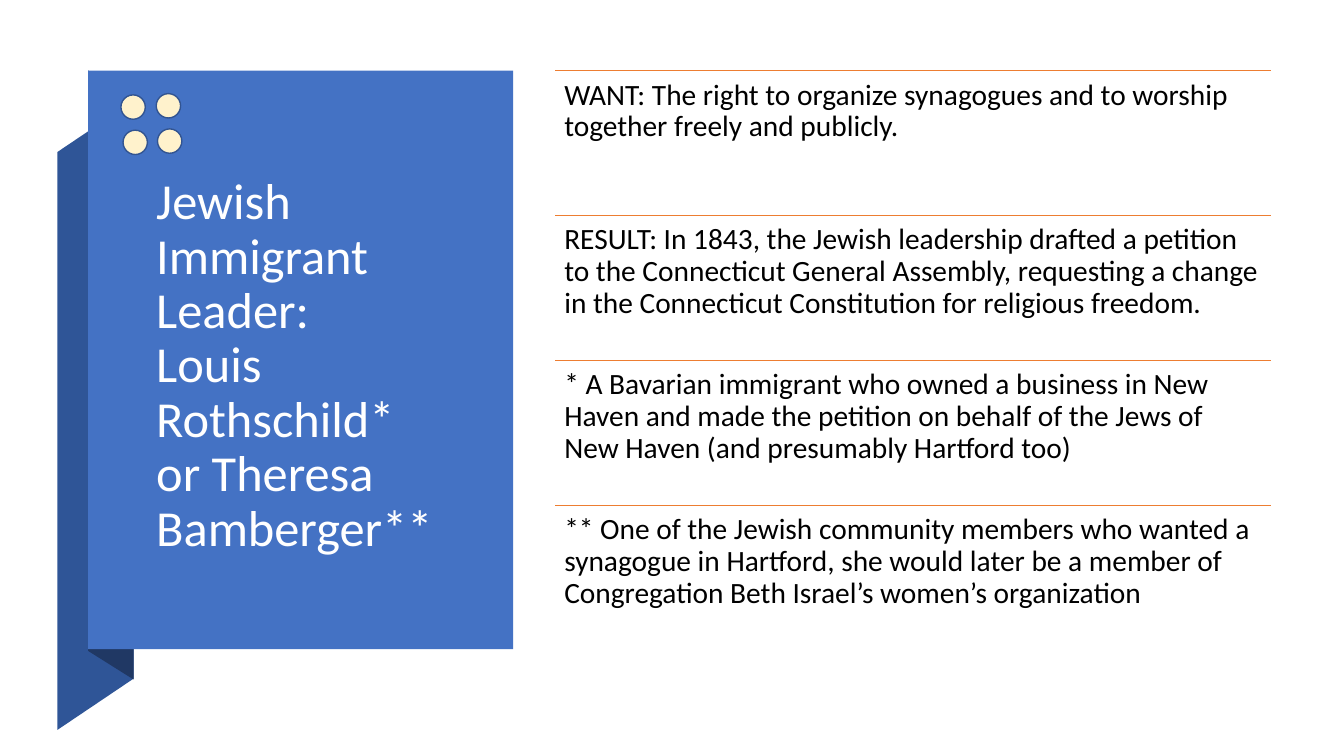
from pptx import Presentation
from pptx.dml.color import RGBColor
from pptx.enum.shapes import MSO_CONNECTOR, MSO_SHAPE
from pptx.enum.text import MSO_ANCHOR, MSO_AUTO_SIZE, PP_ALIGN
from pptx.oxml.ns import qn
from pptx.util import Inches, Pt
from lxml import etree

RECT, OVAL = MSO_SHAPE.RECTANGLE, MSO_SHAPE.OVAL
STRAIGHT = MSO_CONNECTOR.STRAIGHT
TOP, MIDDLE = MSO_ANCHOR.TOP, MSO_ANCHOR.MIDDLE
LEFT = PP_ALIGN.LEFT
NO_FIT = MSO_AUTO_SIZE.NONE

BLUE = RGBColor(0x44, 0x72, 0xC4)
RIBBON_BLUE = RGBColor(0x2F, 0x55, 0x97)
FOLD_BLUE = RGBColor(0x20, 0x38, 0x64)
DOT_LINE = RGBColor(0x32, 0x54, 0x91)
CREAM = RGBColor(0xFF, 0xF2, 0xCC)
ORANGE = RGBColor(0xED, 0x7D, 0x31)
WHITE = RGBColor(0xFF, 0xFF, 0xFF)
BLACK = RGBColor(0x00, 0x00, 0x00)

COLUMNS, ROWS = 160, 90

TITLE = "Jewish Immigrant Leader:\vLouis Rothschild* or Theresa Bamberger**"
ITEMS = [
    "WANT: The right to organize synagogues and to worship together freely and publicly.",
    "RESULT: In 1843, the Jewish leadership drafted a petition to the Connecticut General "
    "Assembly, requesting a change in the Connecticut Constitution for religious freedom.",
    "* A Bavarian immigrant who owned a business in New Haven and made the petition on "
    "behalf of the Jews of New Haven (and presumably Hartford too)",
    "** One of the Jewish community members who wanted a synagogue in Hartford, she would "
    "later be a member of Congregation Beth Israel’s women’s organization",
]


class SlideBuilder:
    """Draws on one slide; lengths are grid columns and rows."""

    font = "Calibri"

    def __init__(self, prs):
        self.s = prs.slides.add_slide(prs.slide_layouts[5])
        self.column = prs.slide_width / COLUMNS
        self.row = prs.slide_height / ROWS

    def x(self, columns):
        return round(columns * self.column)

    def y(self, rows):
        return round(rows * self.row)

    def box(self, left, top, width, height):
        return self.x(left), self.y(top), self.x(width), self.y(height)

    def paint(self, sp, fill, line=None):
        sp.shadow.inherit = False
        sp.fill.solid()
        sp.fill.fore_color.rgb = fill
        if line is None:
            sp.line.fill.background()
        else:
            sp.line.color.rgb = line
            sp.line.width = Pt(1)

    def shape(self, kind, area, fill, line=None):
        self.paint(self.s.shapes.add_shape(kind, *self.box(*area)), fill, line)

    def outline(self, points, fill):
        start, *rest = [(self.x(px), self.y(py)) for px, py in points]
        builder = self.s.shapes.build_freeform(*start)
        builder.add_line_segments(rest, close=True)
        self.paint(builder.convert_to_shape(), fill)

    def rule(self, left, top, width, color):
        y = self.y(top)
        cxn = self.s.shapes.add_connector(STRAIGHT, self.x(left), y, self.x(left + width), y)
        cxn.line.color.rgb = color
        cxn.line.width = Pt(1)
        etree.SubElement(cxn._element.spPr, qn("a:effectLst"))

    def set_text(self, sp, text, size, color, anchor):
        tf = sp.text_frame
        tf.text = text
        tf.word_wrap = True
        tf.auto_size = NO_FIT
        tf.vertical_anchor = anchor
        p = tf.paragraphs[0]
        p.alignment = LEFT
        p.line_spacing = 0.9
        for r in p.runs:
            r.font.name = self.font
            r.font.size = Pt(size)
            r.font.color.rgb = color
        return tf

    def title(self, area, text):
        sp = self.s.shapes.title
        sp.left, sp.top, sp.width, sp.height = self.box(*area)
        self.set_text(sp, text, 36, WHITE, MIDDLE)
        # Bring the title in front of the panel
        sp._element.getparent().append(sp._element)

    def text(self, area, text):
        sp = self.s.shapes.add_textbox(*self.box(*area))
        tf = self.set_text(sp, text, 21, BLACK, TOP)
        tf.margin_left = tf.margin_right = Inches(0.09)
        tf.margin_top = tf.margin_bottom = Inches(0.09)


def main():
    prs = Presentation()
    prs.slide_width, prs.slide_height = Inches(13.333), Inches(7.5)
    slide = SlideBuilder(prs)

    # Folded ribbon behind the title panel
    slide.outline([(6.84, 86.9), (15.9, 80.8), (15.9, 12), (6.84, 18.1)], RIBBON_BLUE)
    slide.outline([(10.5, 77.5), (15.9, 80.9), (15.9, 11.9), (10.5, 8.4)], FOLD_BLUE)

    # Title panel
    slide.shape(RECT, (10.5, 8.4, 50.6, 68.9), BLUE)
    slide.title((17.4, 20, 36.1, 47.3), TITLE)

    # Ruled list of statements
    left, top, width, pitch = 66.1, 8.4, 85.2, 17.25
    for i, item in enumerate(ITEMS):
        y = top + i * pitch
        slide.rule(left, y, width, ORANGE)
        slide.text((left, y, width, pitch), item)

    # Four dots in the panel corner
    for x, y in [(14.4, 11.3), (18.6, 11.15), (18.75, 15.35), (14.65, 15.5)]:
        slide.shape(OVAL, (x, y, 2.9, 2.9), CREAM, DOT_LINE)

    prs.save("out.pptx")


if __name__ == "__main__":
    main()
